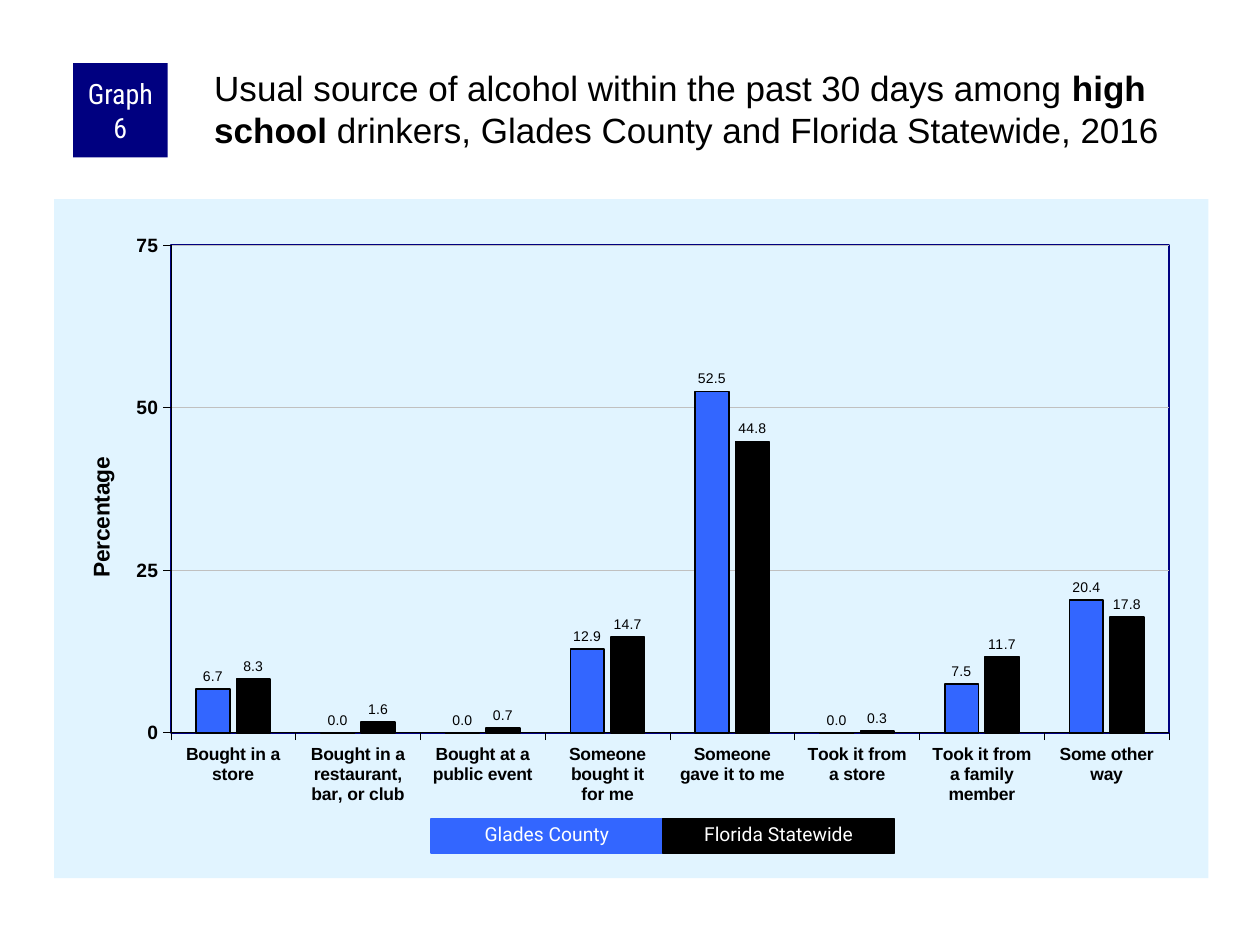
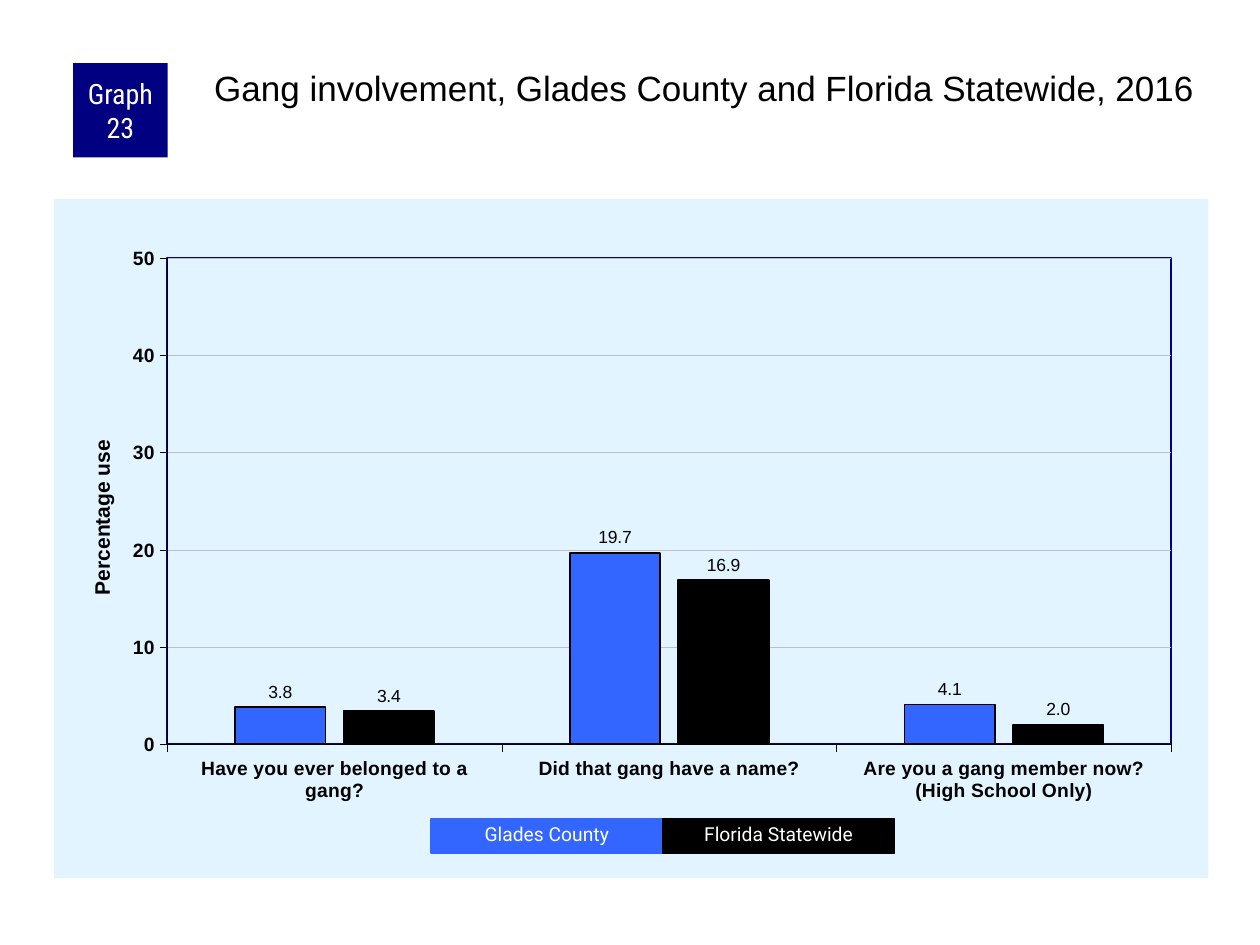
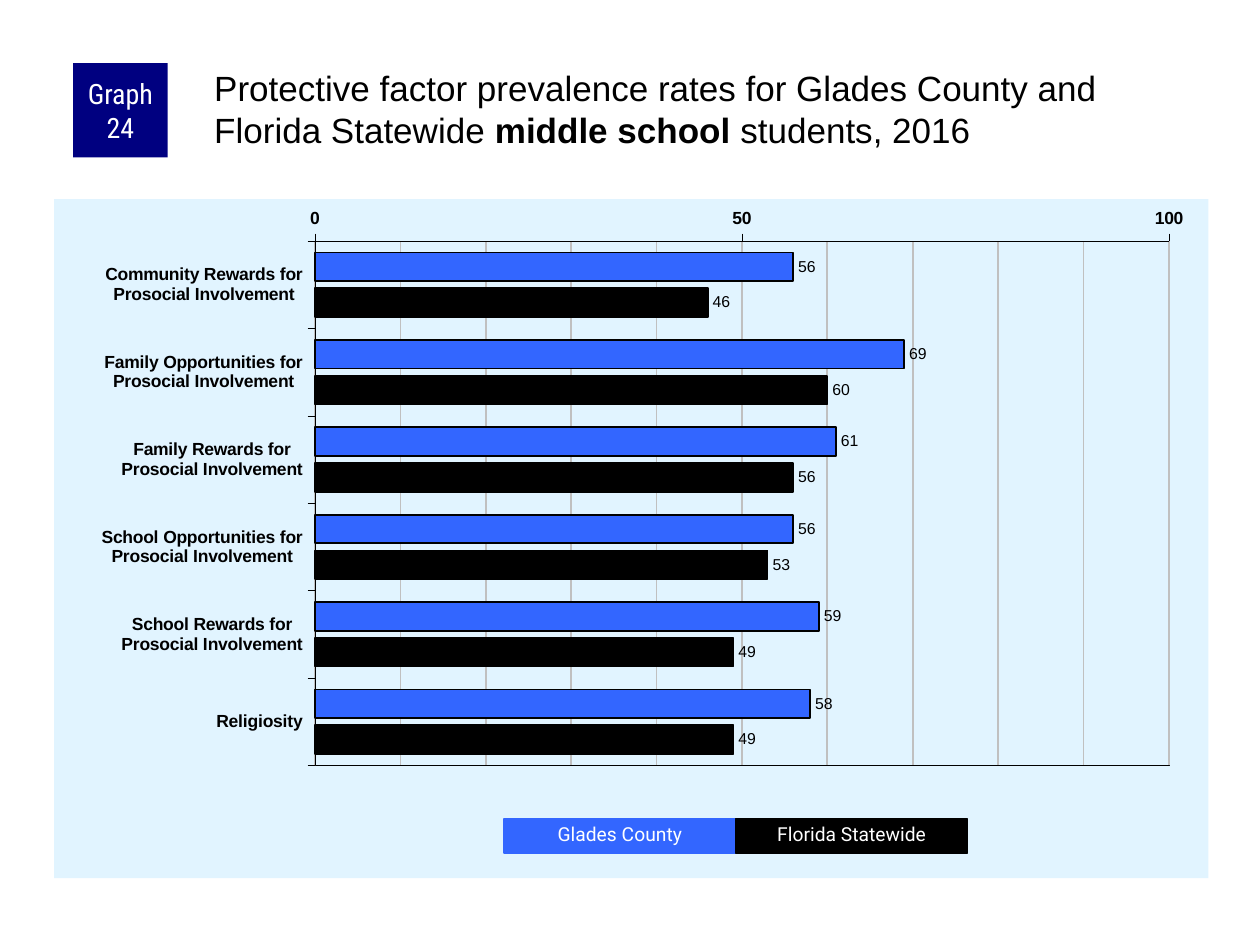
from lxml import etree
from pptx import Presentation
from pptx.chart.data import CategoryChartData
from pptx.dml.color import RGBColor
from pptx.enum.chart import (XL_AXIS_CROSSES, XL_CHART_TYPE,
                             XL_LABEL_POSITION, XL_TICK_MARK)
from pptx.enum.shapes import MSO_SHAPE
from pptx.enum.text import MSO_ANCHOR, MSO_AUTO_SIZE, PP_ALIGN
from pptx.oxml import parse_xml
from pptx.oxml.ns import nsdecls, qn
from pptx.util import Inches, Pt

COLUMN, BAR = XL_CHART_TYPE.COLUMN_CLUSTERED, XL_CHART_TYPE.BAR_CLUSTERED
OUTSIDE, NO_TICK = XL_TICK_MARK.OUTSIDE, XL_TICK_MARK.NONE
OUT_END, AT_MAX = XL_LABEL_POSITION.OUTSIDE_END, XL_AXIS_CROSSES.MAXIMUM
RECT = MSO_SHAPE.RECTANGLE
TOP, MIDDLE = MSO_ANCHOR.TOP, MSO_ANCHOR.MIDDLE
CENTER, GROW = PP_ALIGN.CENTER, MSO_AUTO_SIZE.SHAPE_TO_FIT_TEXT

COLORS = {"county": "3366FF", "state": "000000", "navy": "000080",
          "panel": "E1F4FF", "grid": "C0C0C0", "ink": "000000",
          "white": "FFFFFF"}
REGIONS = [("Glades County", "county"), ("Florida Statewide", "state")]

GRAPHS = [
    {"number": 6,
     "title": [("Usual source of alcohol within the past 30 days among ", False),
               ("high school", True),
               (" drinkers, Glades County and Florida Statewide, 2016", False)],
     "legend_left": 3.42,
     "chart": {
         "kind": COLUMN,
         "cats": ["Bought in a store", "Bought in a restaurant, bar, or club",
                  "Bought at a public event", "Someone bought it\nfor me",
                  "Someone\ngave it to me", "Took it from\na store",
                  "Took it from\na family member", "Some other way"],
         "values": [(6.7, 0, 0, 12.9, 52.5, 0, 7.5, 20.4),
                    (8.3, 1.6, 0.7, 14.7, 44.8, 0.3, 11.7, 17.8)],
         "plot": (0.101, 0.068, 0.865, 0.718), "border": ("navy", 1),
         "scale": (75, 25), "axis_title": ("Percentage", 13, 0.025, 0.374),
         "label": (8, "0.0")}},
    {"number": 23,
     "title": [("Gang involvement, Glades County and Florida Statewide, 2016",
                False)],
     "legend_left": 3.42,
     "chart": {
         "kind": COLUMN,
         "cats": ["Have you ever belonged to a gang?",
                  "Did that gang have a name?",
                  "Are you a gang member now?\n(High School Only)"],
         "values": [(3.8, 19.7, 4.1), (3.4, 16.9, 2.0)],
         "plot": (0.098, 0.087, 0.87, 0.716), "border": ("navy", 1),
         "scale": (50, 10), "axis_title": ("Percentage use", 12, 0.027, 0.349),
         "label": (10, "0.0"), "cat_size": 11}},
    {"number": 24,
     "title": [("Protective factor prevalence rates for Glades County and "
                "Florida Statewide ", False),
               ("middle school ", True), ("students, 2016", False)],
     "legend_left": 4,
     "chart": {
         "kind": BAR,
         "cats": [f"{factor} for\nProsocial Involvement" for factor in
                  ("Community Rewards", "Family Opportunities",
                   "Family Rewards", "School Opportunities",
                   "School Rewards")] + ["Religiosity"],
         "values": [(56, 69, 61, 56, 59, 58), (46, 60, 56, 53, 49, 49)],
         "plot": (0.226, 0.062, 0.74, 0.772), "border": ("ink", 0.25),
         "scale": (100, 50), "minor": 10, "grid_width": 1,
         "label": (9, "0"), "val_size": 10, "gap": 80, "overlap": -25}},
]


class Deck:
    """Holds the graph style and the current slide."""

    def __init__(self):
        self.prs = Presentation()
        self.prs.slide_width, self.prs.slide_height = Inches(10), Inches(7.5)
        self.slide = None

    def new_slide(self):
        self.slide = self.prs.slides.add_slide(self.prs.slide_layouts[6])

    def put(self, obj, **fmt):
        for name, value in fmt.items():
            setattr(obj, name, value)

    def font(self, font, size, color="ink", name="Arial", bold=False):
        self.put(font, size=Pt(size), name=name, bold=bold)
        font.color.rgb = RGBColor.from_string(COLORS[color])

    def fill(self, fill, color):
        fill.solid()
        fill.fore_color.rgb = RGBColor.from_string(COLORS[color])

    def line(self, line, color, width):
        self.fill(line.fill, color)
        line.width = Pt(width)

    def margins(self, tf, left, top, right, bottom):
        self.put(tf, margin_left=Inches(left), margin_top=Inches(top),
                 margin_right=Inches(right), margin_bottom=Inches(bottom))

    def box(self, x, y, w, h, color, text, size, name):
        sp = self.slide.shapes.add_shape(
            RECT, Inches(x), Inches(y), Inches(w), Inches(h))
        sp.shadow.inherit = False
        self.fill(sp.fill, color)
        sp.line.fill.background()
        tf = sp.text_frame
        tf.word_wrap = True
        p = tf.paragraphs[0]
        p.alignment = CENTER
        r = p.add_run()
        r.text = text
        self.font(r.font, size, "white", name)
        return sp

    def badge(self, number):
        sp = self.box(0.58, 0.5, 0.75, 0.75, "navy", f"Graph {number}",
                      16, "Roboto Condensed")
        self.margins(sp.text_frame, 0.05, 0, 0.05, 0)
        sp.text_frame.vertical_anchor = MIDDLE

    def title(self, runs):
        tf = self.slide.shapes.add_textbox(
            Inches(1.67), Inches(0.5), Inches(7.92), Inches(0.83)).text_frame
        tf.word_wrap = True
        self.margins(tf, 0.03, 0.03, 0, 0)
        for text, bold in runs:
            r = tf.paragraphs[0].add_run()
            r.text = text
            self.font(r.font, 20, bold=bold)

    def legend(self, left, width=1.84):
        for i, (region, color) in enumerate(REGIONS):
            sp = self.box(left + i * width, 6.5, width, 0.27, color, region,
                          11, "Roboto")
            self.line(sp.line, color, 0.75)
            self.put(sp.text_frame, vertical_anchor=TOP, auto_size=GROW)
            sp.text_frame.paragraphs[0].line_spacing = 0.9

    def layout(self, parent, index, inner=False, **place):
        for old in parent.findall(qn("c:layout")):
            parent.remove(old)
        layout = parse_xml(f"<c:layout {nsdecls('c')}><c:manualLayout/></c:layout>")
        parts = {"layoutTarget": "inner"} if inner else {}
        parts.update(xMode="edge", yMode="edge", **place)
        for tag, value in parts.items():
            etree.SubElement(layout[0], qn(f"c:{tag}")).set("val", str(value))
        parent.insert(index, layout)

    def area(self, fill=None, border=None):
        def solid(color):
            return f'<a:solidFill><a:srgbClr val="{COLORS[color]}"/></a:solidFill>'
        inside = solid(fill) if fill else "<a:noFill/>"
        edge = "<a:ln><a:noFill/></a:ln>"
        if border:
            edge = f'<a:ln w="{Pt(border[1])}">{solid(border[0])}</a:ln>'
        return parse_xml(f"<c:spPr {nsdecls('c', 'a')}>{inside}{edge}</c:spPr>")

    def axis(self, axis, size):
        self.put(axis, major_tick_mark=OUTSIDE, minor_tick_mark=NO_TICK)
        self.font(axis.tick_labels.font, size, bold=True)
        self.line(axis.format.line, "ink", 0.25)

    def axis_title(self, axis, text, size, x, y):
        title = axis.axis_title
        title.text_frame.text = text
        r = title.text_frame.paragraphs[0].runs[0]
        self.font(r.font, size, bold=True)
        self.layout(title.element, 1, x=x, y=y)

    def chart(self, kind, cats, values, plot, border, scale, label,
              axis_title=None, minor=None, grid_width=0.25, cat_size=10,
              val_size=11, gap=150, overlap=-20):
        data = CategoryChartData()
        data.categories = cats
        for (region, _), vals in zip(REGIONS, values):
            data.add_series(region, vals)
        chart = self.slide.shapes.add_chart(
            kind, Inches(0.43), Inches(1.58), Inches(9.16), Inches(5.39),
            data).chart
        self.put(chart, has_legend=False, has_title=False)
        self.font(chart.font, 11.5)

        cat, val = chart.category_axis, chart.value_axis
        self.axis(cat, cat_size)
        self.axis(val, val_size)
        self.put(val, minimum_scale=0, maximum_scale=scale[0],
                 major_unit=scale[1], has_major_gridlines=True)
        self.line(val.major_gridlines.format.line, "grid", grid_width)
        if minor:
            self.put(val, minor_unit=minor, has_minor_gridlines=True)
            for grid in chart.element.iter(qn("c:minorGridlines")):
                grid.append(self.area(border=("grid", grid_width)))
        if kind == BAR:
            self.put(cat, reverse_order=True, crosses=AT_MAX)
        if axis_title:
            self.axis_title(val, *axis_title)

        bars = chart.plots[0]
        self.put(bars, gap_width=gap, overlap=overlap, vary_by_categories=False)
        for series, (_, color) in zip(bars.series, REGIONS):
            series.invert_if_negative = False
            self.fill(series.format.fill, color)
            self.line(series.format.line, "ink", 1)
            labels = series.data_labels
            self.put(labels, show_value=True, position=OUT_END,
                     number_format=label[1], number_format_is_linked=False)
            self.font(labels.font, label[0])

        body = chart.element.find(qn("c:chart"))
        body.addnext(self.area(fill="panel"))
        plot_area = body.find(qn("c:plotArea"))
        self.layout(plot_area, 0, inner=True, **dict(zip("xywh", plot)))
        plot_area.append(self.area(border=border))


def main():
    deck = Deck()
    for graph in GRAPHS:
        deck.new_slide()
        deck.chart(**graph["chart"])
        deck.badge(graph["number"])
        deck.title(graph["title"])
        deck.legend(graph["legend_left"])
    deck.prs.save("out.pptx")


if __name__ == "__main__":
    main()
